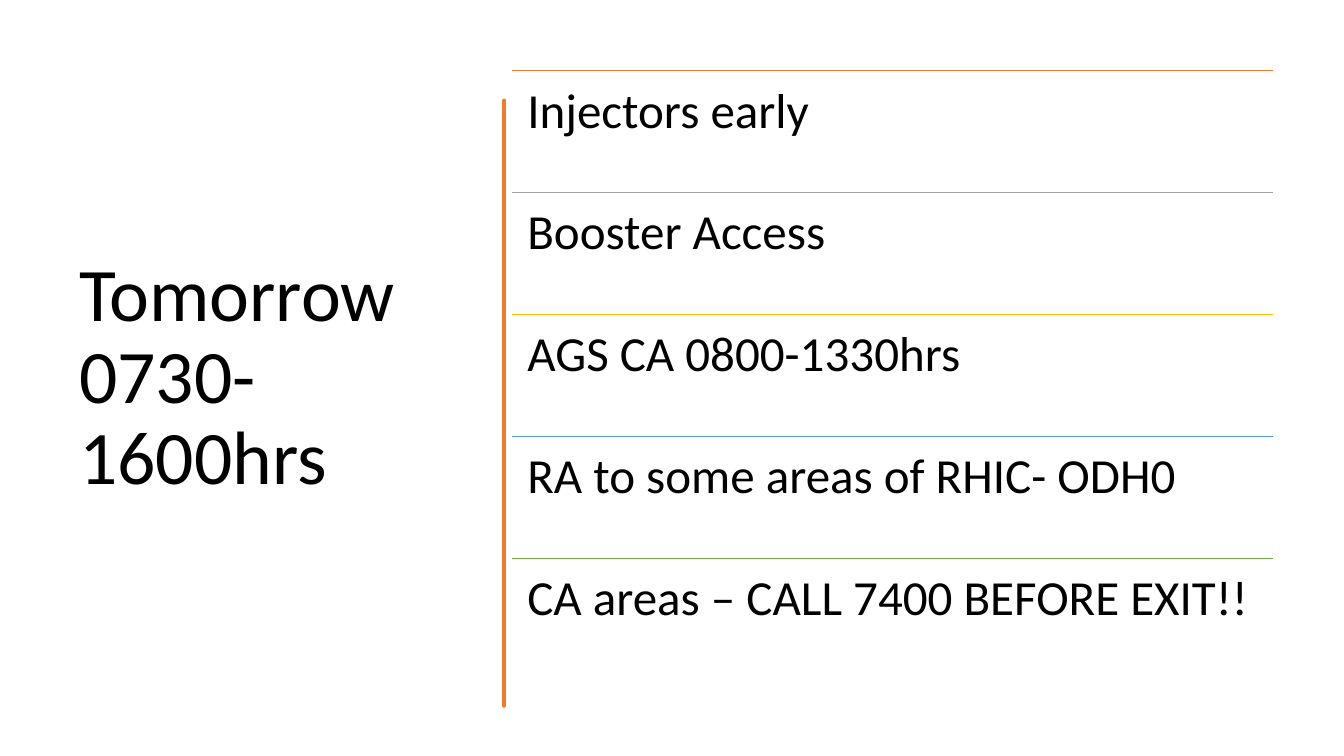
import pptx
import pptx.dml.color
import pptx.enum.shapes
import pptx.enum.text
import pptx.oxml.ns
import pptx.util
from lxml import etree

Inches = pptx.util.Inches

COLORS = {"text": "000000", "orange": "ED7D31", "gray": "A5A5A5",
          "gold": "FFC000", "blue": "5B9BD5", "green": "70AD47"}
FONT = "Calibri"
AGENDA = [("Injectors early", "orange"),
          ("Booster Access", "gray"),
          ("AGS CA 0800-1330hrs", "gold"),
          ("RA to some areas of RHIC- ODH0", "blue"),
          ("CA areas – CALL 7400 BEFORE EXIT!!", "green")]
TOP, ROW = 0.7, 1.21
LEFT, WIDTH = 5.08, 7.55
BAR_TOP, BAR_HEIGHT = 0.84, 5.92
BAR_LEFT, BAR_RIGHT = 4.73, 4.75
LEFT_WOBBLE = [0, 1.2, 0.5, -0.5, 0.8, 1, -0.1, 0, 0.4, 0, -0.2,
               0.2, -0.8, 0, -0.1, -0.6, 0.1, 0.6, -0.2, -0.2, 0]
RIGHT_WOBBLE = [0, 1.5, 0, -0.6, 0, 0, -0.7, 0, 0.8, 0.2, -0.3,
                1.4, -0.3, -2.6, -1, 0.8, 1.5, -0.1, -0.7, 0, 0]


def color(name):
    return pptx.dml.color.RGBColor.from_string(COLORS[name])


def add_text(page, text, place, size, inset, anchor):
    box = page.shapes.add_textbox(*map(Inches, place))
    frame = box.text_frame
    frame.word_wrap = True
    frame.vertical_anchor = anchor
    frame.margin_left = frame.margin_right = Inches(inset[0])
    frame.margin_top = frame.margin_bottom = Inches(inset[1])
    para = frame.paragraphs[0]
    para.line_spacing = 0.9
    span = para.add_run()
    span.text = text
    span.font.name = FONT
    span.font.size = pptx.util.Pt(size)
    span.font.color.rgb = color("text")


def add_rule(page, top, name):
    rule = page.shapes.add_connector(
        pptx.enum.shapes.MSO_CONNECTOR.STRAIGHT,
        *map(Inches, (LEFT, top, LEFT + WIDTH, top)))
    rule.line.color.rgb = color(name)
    rule.line.width = pptx.util.Pt(1)
    properties = rule._element.spPr
    etree.SubElement(properties, pptx.oxml.ns.qn("a:effectLst"))


def edge_points(base, wobble):
    step = BAR_HEIGHT / (len(wobble) - 1)
    return [(base + shift / 100, BAR_TOP + index * step)
            for index, shift in enumerate(wobble)]


def add_brush_bar(page):
    outline = (edge_points(BAR_RIGHT, RIGHT_WOBBLE)
               + edge_points(BAR_LEFT, LEFT_WOBBLE)[::-1])
    builder = page.shapes.build_freeform(*outline[0], scale=Inches(1))
    builder.add_line_segments(outline[1:], close=True)
    bar = builder.convert_to_shape()
    bar.shadow.inherit = False
    bar.fill.solid()
    bar.fill.fore_color.rgb = color("orange")
    bar.line.color.rgb = color("orange")
    bar.line.width = pptx.util.Pt(3.25)


def main():
    """Build the schedule slide and save it."""
    deck = pptx.Presentation()
    deck.slide_width = Inches(13.33)
    deck.slide_height = Inches(7.5)
    page = deck.slides.add_slide(deck.slide_layouts[6])
    anchors = pptx.enum.text.MSO_ANCHOR
    add_text(page, "Tomorrow 0730-1600hrs", (0.69, TOP, 3.74, 6.11), 54,
             (0.1, 0.05), anchors.MIDDLE)
    add_brush_bar(page)
    for index, (text, name) in enumerate(AGENDA):
        top = TOP + index * ROW
        add_rule(page, top, name)
        add_text(page, text, (LEFT, top, WIDTH, ROW), 35,
                 (0.15, 0.15), anchors.TOP)
    deck.save("out.pptx")


if __name__ == "__main__":
    main()
